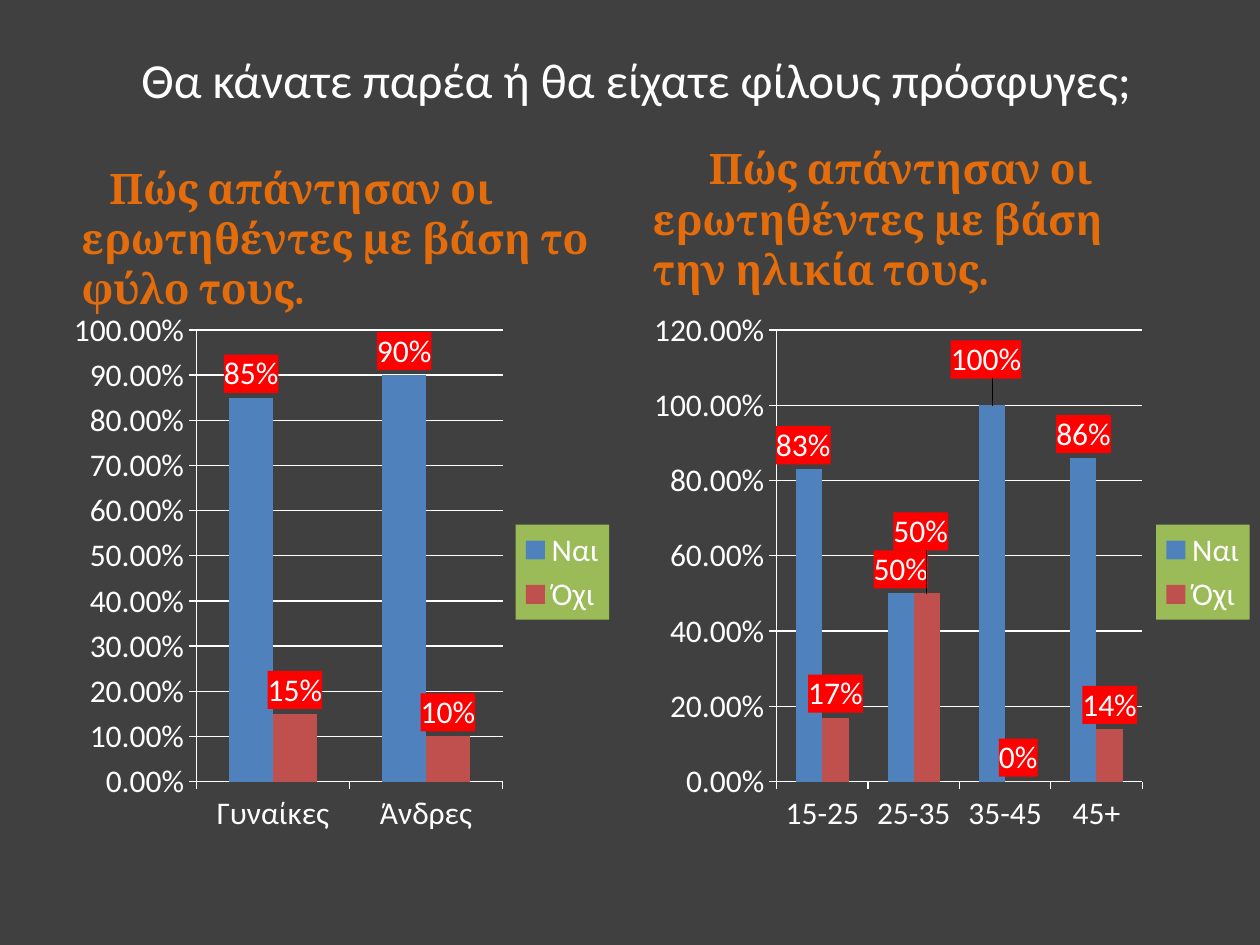
import lxml.etree
import pptx
import pptx.chart.data
import pptx.dml.color
import pptx.enum.chart
import pptx.enum.text
import pptx.oxml
import pptx.oxml.ns
import pptx.util

Pt = pptx.util.Pt
qn = pptx.oxml.ns.qn
NAMESPACES = pptx.oxml.ns.nsdecls("c", "a")


def color(hex_text):
    return pptx.dml.color.RGBColor.from_string(hex_text)


def solid_fill(hex_text):
    """Fill element for chart parts that have no public fill property."""
    return pptx.oxml.parse_xml(
        f'<c:spPr {NAMESPACES}><a:solidFill><a:srgbClr val="{hex_text}"/></a:solidFill></c:spPr>')


def manual_layout(**values):
    parts = "".join(f'<c:{name} val="{value}"/>' for name, value in values.items())
    return pptx.oxml.parse_xml(
        f"<c:layout {NAMESPACES}><c:manualLayout>{parts}</c:manualLayout></c:layout>")


class SurveyPage:
    background, text, heading = "404040", "FFFFFF", "E46C0A"
    label_fill, legend_fill = "FF0000", "9BBB59"
    series_colors = ("4F81BD", "C0504D")
    body_font, heading_font = "Calibri", "Cambria"

    def __init__(self, deck):
        self.page = deck.slides.add_slide(deck.slide_layouts[5])
        fill = self.page.background.fill
        fill.solid()
        fill.fore_color.rgb = color(self.background)

    def set_font(self, font, size, name, hex_text, bold=False):
        font.size, font.name, font.bold = Pt(size), name, bold
        font.color.rgb = color(hex_text)

    def add_title(self, text, left, top, width, height):
        box = self.page.shapes.title
        box.left, box.top, box.width, box.height = map(Pt, (left, top, width, height))
        box.text_frame.text = text
        box.text_frame.vertical_anchor = pptx.enum.text.MSO_ANCHOR.MIDDLE
        para = box.text_frame.paragraphs[0]
        para.alignment = pptx.enum.text.PP_ALIGN.CENTER
        self.set_font(para.font, 28, self.body_font, self.text)

    def add_heading(self, text, left, top, width, height, indent, bottom_margin=3.6):
        box = self.page.shapes.add_textbox(*map(Pt, (left, top, width, height)))
        frame = box.text_frame
        frame.word_wrap = True
        frame.vertical_anchor = pptx.enum.text.MSO_ANCHOR.BOTTOM
        frame.margin_bottom = Pt(bottom_margin)
        para = frame.paragraphs[0]
        para.text = text
        para._p.get_or_add_pPr().set("indent", str(Pt(indent)))
        self.set_font(para.font, 24, self.heading_font, self.heading, bold=True)

    def add_chart(self, categories, series, left, width, plot_x, plot_width,
                  maximum, step, label_shifts=()):
        data = pptx.chart.data.CategoryChartData(number_format="0%")
        data.categories = categories
        for name, values in series.items():
            data.add_series(name, values)
        chart = self.page.shapes.add_chart(
            pptx.enum.chart.XL_CHART_TYPE.COLUMN_CLUSTERED,
            Pt(left), Pt(171.5), Pt(width), Pt(311), data).chart
        chart.has_title = False
        self.set_font(chart.font, 18, self.body_font, self.text)

        # Plot area
        area = chart._chartSpace.chart.plotArea
        for layout in area.findall(qn("c:layout")):
            area.remove(layout)
        area.insert(0, manual_layout(layoutTarget="inner", xMode="edge", yMode="edge",
                                     x=plot_x, y=0.055, w=plot_width, h=0.83))

        # Axes
        axis = chart.value_axis
        axis.minimum_scale, axis.maximum_scale, axis.major_unit = 0, maximum, step
        axis.tick_labels.number_format = "0.00%"
        axis.tick_labels.number_format_is_linked = False
        axis.has_major_gridlines = True
        for line in (axis.format.line, axis.major_gridlines.format.line,
                     chart.category_axis.format.line):
            line.color.rgb = color(self.text)
            line.width = Pt(0.75)
        for each in (axis, chart.category_axis):
            each.major_tick_mark = pptx.enum.chart.XL_TICK_MARK.OUTSIDE

        # Legend
        chart.has_legend = True
        chart.legend.position = pptx.enum.chart.XL_LEGEND_POSITION.RIGHT
        chart.legend.include_in_layout = False
        chart.legend._element.append(solid_fill(self.legend_fill))

        # Columns and their labels
        plot = chart.plots[0]
        plot.gap_width, plot.overlap, plot.vary_by_categories = 150, 0, False
        for columns, hex_text in zip(plot.series, self.series_colors):
            columns.format.fill.solid()
            columns.format.fill.fore_color.rgb = color(hex_text)
            columns.invert_if_negative = False
            labels = columns.data_labels
            labels.show_value = True
            labels.number_format, labels.number_format_is_linked = "0%", False
            labels.position = pptx.enum.chart.XL_LABEL_POSITION.OUTSIDE_END
            labels._element.find(qn("c:numFmt")).addnext(solid_fill(self.label_fill))
        for series_index, point_index, x, y in label_shifts:
            self.shift_label(plot.series[series_index], point_index, x, y)

    def shift_label(self, columns, point_index, x, y):
        label = columns.points[point_index].data_label
        label.position = pptx.enum.chart.XL_LABEL_POSITION.OUTSIDE_END
        element = columns.data_labels._element.find(
            f"{qn('c:dLbl')}[{qn('c:idx')}][@val='{point_index}']")
        element = next(item for item in columns.data_labels._element.findall(qn("c:dLbl"))
                       if item.find(qn("c:idx")).get("val") == str(point_index))
        number_format = pptx.oxml.parse_xml(
            f'<c:numFmt {NAMESPACES} formatCode="0%" sourceLinked="0"/>')
        for old in element.findall(qn("c:spPr")):
            element.remove(old)
        parts = (manual_layout(x=x, y=y), number_format, solid_fill(self.label_fill))
        for position, part in enumerate(parts, start=1):
            element.insert(position, part)


def main():
    deck = pptx.Presentation()
    deck.slide_width, deck.slide_height = Pt(720), Pt(540)
    survey = SurveyPage(deck)
    survey.add_title("Θα κάνατε παρέα ή θα είχατε φίλους πρόσφυγες;", 39.5, 0, 648, 90)

    # Answers by gender
    survey.add_heading("Πώς απάντησαν οι ερωτηθέντες με βάση το φύλο τους.",
                       39.5, 124, 314.5, 87, indent=16, bottom_margin=32)
    survey.add_chart(("Γυναίκες", "Άνδρες"), {"Ναι": (0.85, 0.9), "Όχι": (0.15, 0.1)},
                     left=36, width=318, plot_x=0.24, plot_width=0.55,
                     maximum=1, step=0.1)

    # Answers by age
    survey.add_heading("Πώς απάντησαν οι ερωτηθέντες με βάση την ηλικία τους.",
                       366, 121, 318, 50.5, indent=32)
    survey.add_chart(("15-25", "25-35", "35-45", "45+"),
                     {"Ναι": (0.83, 0.5, 1, 0.86), "Όχι": (0.17, 0.5, 0, 0.14)},
                     left=366, width=354, plot_x=0.22, plot_width=0.59,
                     maximum=1.2, step=0.2,
                     label_shifts=((0, 0, -0.01, 0), (0, 2, -0.01, -0.04), (1, 1, -0.01, -0.07)))
    deck.save("out.pptx")


if __name__ == "__main__":
    main()
